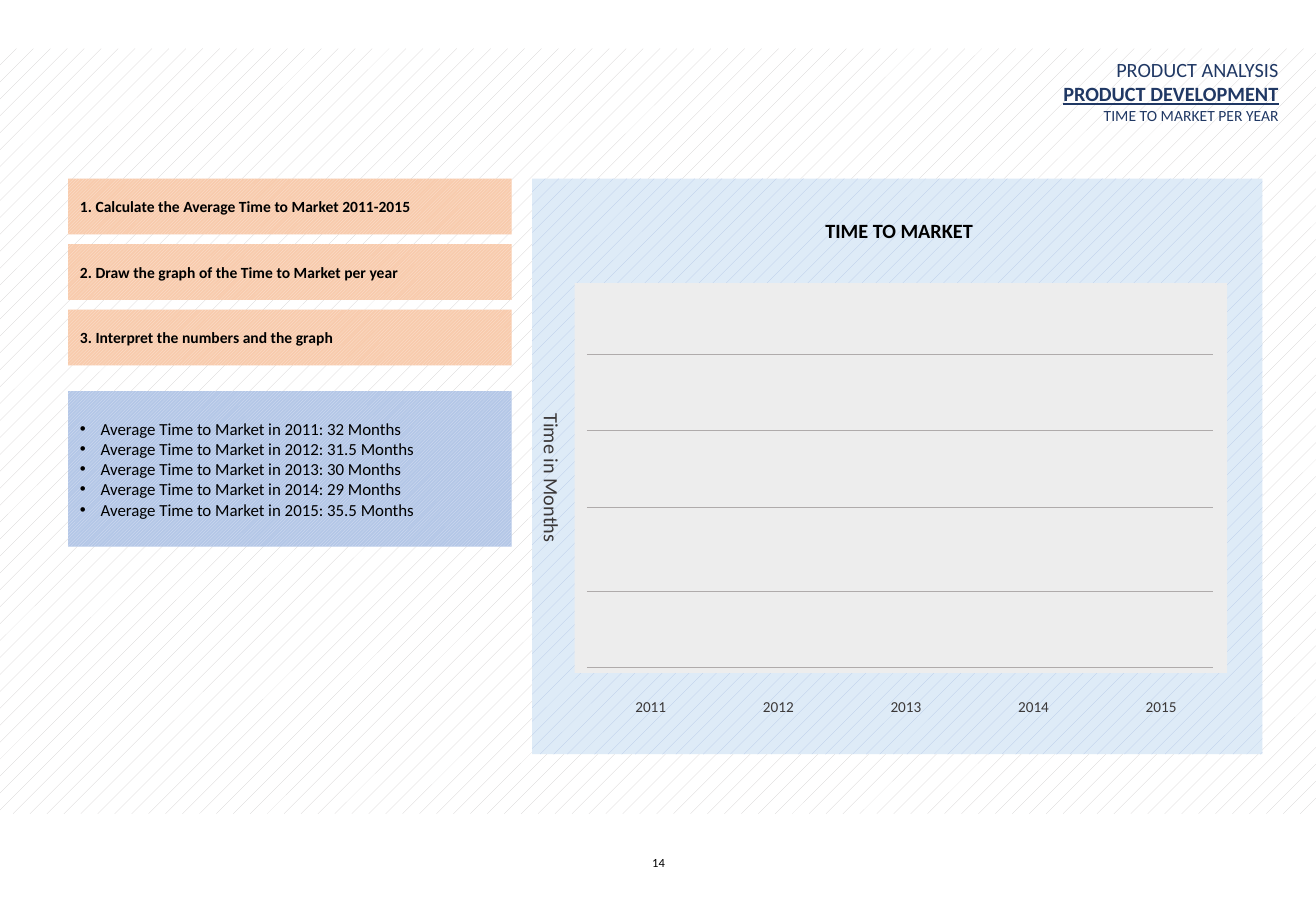
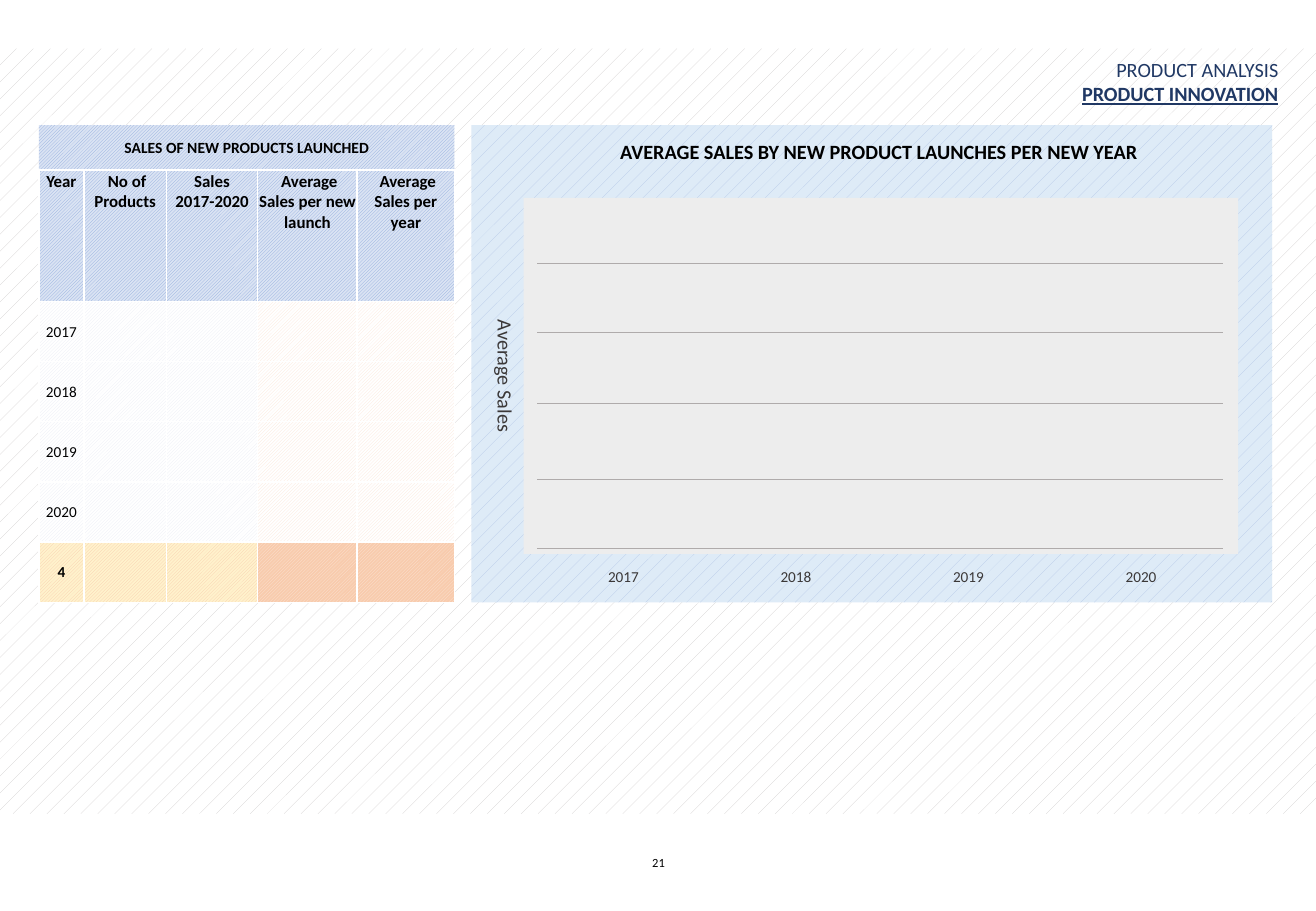
from lxml import etree
from pptx import Presentation
from pptx.dml.color import RGBColor
from pptx.enum.dml import MSO_PATTERN_TYPE
from pptx.enum.shapes import MSO_CONNECTOR_TYPE, MSO_SHAPE
from pptx.enum.text import MSO_ANCHOR, PP_ALIGN
from pptx.oxml.ns import qn
from pptx.util import Inches, Pt

LEFT, CENTER, RIGHT = PP_ALIGN.LEFT, PP_ALIGN.CENTER, PP_ALIGN.RIGHT
TOP, MIDDLE = MSO_ANCHOR.TOP, MSO_ANCHOR.MIDDLE
DIAGONAL = MSO_PATTERN_TYPE.LIGHT_UPWARD_DIAGONAL
DOTS_5, DOTS_10 = MSO_PATTERN_TYPE.PERCENT_5, MSO_PATTERN_TYPE.PERCENT_10
RECTANGLE, STRAIGHT = MSO_SHAPE.RECTANGLE, MSO_CONNECTOR_TYPE.STRAIGHT

BACKDROP = (DOTS_5, "D0CECE", "FFFFFF")
PANEL = (DOTS_10, "B4C7E7", "DEEBF7")
STEP = (DIAGONAL, "FBE5D6", "F8CBAD")
ANSWER = (DIAGONAL, "DAE3F3", "B4C7E7")
HEADER = (DIAGONAL, "8FAADC", "DAE3F3")
INPUT = (DIAGONAL, "E9EBF5", "FFFFFF")
RESULT = (DIAGONAL, "FBE5D6", "FFFFFF")
TOTAL = (DIAGONAL, "F8CBAD", "FFF2CC")
GRID_PERCENTS = (18.4, 37.8, 57.6, 79.1, 98.5)


def color(hex_string):
    return RGBColor.from_string(hex_string)


def paint(fill, style):
    if isinstance(style, str):
        fill.solid()
        fill.fore_color.rgb = color(style)
    else:
        fill.patterned()
        fill.pattern = style[0]
        fill.fore_color.rgb = color(style[1])
        fill.back_color.rgb = color(style[2])


def write(frame, lines, anchor=TOP, align=LEFT, bullet=False, **font_format):
    frame.word_wrap = True
    frame.vertical_anchor = anchor
    for index, line in enumerate(lines):
        words, changes = line if isinstance(line, tuple) else (line, {})
        look = {"size": 9.2, "ink": "000000", "bold": False, "underline": False,
                **font_format, **changes}
        paragraph = frame.paragraphs[0] if index == 0 else frame.add_paragraph()
        paragraph.alignment = align
        run = paragraph.add_run()
        run.text = words
        run.font.name = "Calibri"
        run.font.size = Pt(look["size"])
        run.font.color.rgb = color(look["ink"])
        run.font.bold = look["bold"]
        run.font.underline = look["underline"]
        if bullet:
            properties = paragraph._p.get_or_add_pPr()
            properties.set("marL", str(Inches(0.17)))
            properties.set("indent", str(-Inches(0.17)))
            etree.SubElement(properties, qn("a:buFont"), typeface="Arial")
            etree.SubElement(properties, qn("a:buChar"), char="•")


def border(cell, hex_string, width):
    properties = cell._tc.get_or_add_tcPr()
    for side in ("lnL", "lnR", "lnT", "lnB"):
        edge = etree.SubElement(properties, qn("a:" + side), w=str(Pt(width)))
        solid = etree.SubElement(edge, qn("a:solidFill"))
        etree.SubElement(solid, qn("a:srgbClr"), val=hex_string)


class Deck:
    title_ink = "203864"
    axis_ink = "3B3838"
    plot_fill = "EDEDED"
    grid_ink = "AFABAB"

    def __init__(self):
        self.presentation = Presentation()
        self.presentation.slide_width = Inches(10.83)
        self.presentation.slide_height = Inches(7.5)
        self.slide = None

    def start(self, number, topic, detail=None):
        self.slide = self.presentation.slides.add_slide(self.presentation.slide_layouts[6])
        self.box(0, 0.4, 10.83, 6.3, BACKDROP)
        self.text(4.2, 6.99, 2.44, 0.4, [number], align=CENTER, size=7.4)
        lines = ["PRODUCT ANALYSIS", (topic, {"bold": True, "underline": True})]
        if detail:
            lines.append((detail, {"size": 9.2}))
        self.text(7.5, 0.42, 3.12, 0.16 + 0.17 * len(lines), lines,
                  align=RIGHT, size=12, ink=self.title_ink)

    def box(self, x, y, width, height, style, lines=(), **text_format):
        shape = self.slide.shapes.add_shape(
            RECTANGLE, Inches(x), Inches(y), Inches(width), Inches(height))
        shape.shadow.inherit = False
        shape.line.fill.background()
        paint(shape.fill, style)
        write(shape.text_frame, lines, anchor=MIDDLE, **text_format)

    def text(self, x, y, width, height, lines, rotation=0, **text_format):
        label = self.slide.shapes.add_textbox(
            Inches(x), Inches(y), Inches(width), Inches(height))
        label.rotation = rotation
        write(label.text_frame, lines, **text_format)

    def rule(self, x, y, width):
        line = self.slide.shapes.add_connector(
            STRAIGHT, Inches(x), Inches(y), Inches(x + width), Inches(y))
        line.line.color.rgb = color(self.grid_ink)
        line.line.width = Pt(0.5)
        etree.SubElement(line._element.spPr, qn("a:effectLst"))

    def blank_graph(self, plot, title, title_top, axis, axis_center, years, years_top, pitch):
        x, y, width, height = plot
        self.box(x, y, width, height, self.plot_fill)
        self.text(x, title_top, width - 0.03, 0.3, [title], align=CENTER, size=12, bold=True)
        grid_left = x + 0.0187 * width
        for percent in GRID_PERCENTS:
            self.rule(grid_left, y + height * percent / 100, 0.96 * width)
        self.text(axis_center - height / 2, y + height / 2 - 0.15, height, 0.3, [axis],
                  rotation=90, align=CENTER, size=12, ink=self.axis_ink)
        for index, year in enumerate(years):
            self.text(grid_left + index * pitch, years_top, pitch, 0.25, [year],
                      anchor=MIDDLE, align=CENTER, size=9, ink=self.axis_ink)

    def table(self, x, y, widths, heights, rows, fills):
        grid = self.slide.shapes.add_table(
            len(heights), len(widths), Inches(x), Inches(y),
            Inches(sum(widths)), Inches(sum(heights))).table
        grid.first_row = grid.horz_banding = False
        for column, width in zip(grid.columns, widths):
            column.width = Inches(width)
        for row, height in zip(grid.rows, heights):
            row.height = Inches(height)
        last = len(rows) - 1
        for r, row in enumerate(rows):
            for c, lines in enumerate(row):
                cell = grid.cell(r, c)
                cell.margin_left = cell.margin_right = cell.margin_top = Inches(0.01)
                cell.margin_bottom = 0
                border(cell, "FFFFFF", 1)
                paint(cell.fill, fills[r][c])
                if lines:
                    write(cell.text_frame, lines, align=CENTER,
                          size=9 if r else 10, bold=r in (0, last))
                    cell.vertical_anchor = MIDDLE if r else TOP


def time_to_market(deck):
    deck.start("14", "PRODUCT DEVELOPMENT", "TIME TO MARKET PER YEAR")
    months = {"2011": "32", "2012": "31.5", "2013": "30", "2014": "29", "2015": "35.5"}
    deck.box(0.56, 3.22, 3.65, 1.28, ANSWER,
             [f"Average Time to Market in {year}: {value} Months"
              for year, value in months.items()], bullet=True, size=10)
    steps = ("1. Calculate the Average Time to Market 2011-2015",
             "2. Draw the graph of the Time to Market per year",
             "3. Interpret the numbers and the graph")
    for index, step in enumerate(steps):
        deck.box(0.56, 1.47 + 0.54 * index, 3.65, 0.46, STEP, [step], bold=True)
    deck.box(4.38, 1.47, 6.01, 4.74, PANEL)
    deck.blank_graph((4.73, 2.33, 5.37, 3.21), "TIME TO MARKET", 1.75,
                     "Time in Months", 4.54, months, 5.69, 1.05)


def new_product_sales(deck):
    deck.start("21", "PRODUCT INNOVATION")
    years = ("2017", "2018", "2019", "2020")
    deck.box(3.88, 1.03, 6.59, 3.93, PANEL)
    deck.box(0.32, 1.03, 3.42, 0.37, HEADER, ["SALES OF NEW PRODUCTS LAUNCHED"],
             align=CENTER, bold=True)
    headings = [["Year"], [" No of Products"], ["Sales", "2017-2020"],
                [" Average Sales per new launch"], [" Average Sales per year"]]
    rows = [headings] + [[[label]] + [None] * 4 for label in (*years, "4")]
    fills = [[HEADER] * 5] + [[INPUT] * 3 + [RESULT] * 2] * 4 + [[TOTAL] * 3 + [STEP] * 2]
    deck.table(0.32, 1.4, (0.37, 0.68, 0.75, 0.82, 0.8),
               [1.08] + [(3.56 - 1.08) / 5] * 5, rows, fills)
    deck.blank_graph((4.31, 1.63, 5.88, 2.93),
                     "AVERAGE SALES BY NEW PRODUCT LAUNCHES PER NEW YEAR", 1.1,
                     "Average Sales", 4.16, years, 4.62, 1.42)


def main():
    deck = Deck()
    time_to_market(deck)
    new_product_sales(deck)
    deck.presentation.save("out.pptx")


if __name__ == "__main__":
    main()
